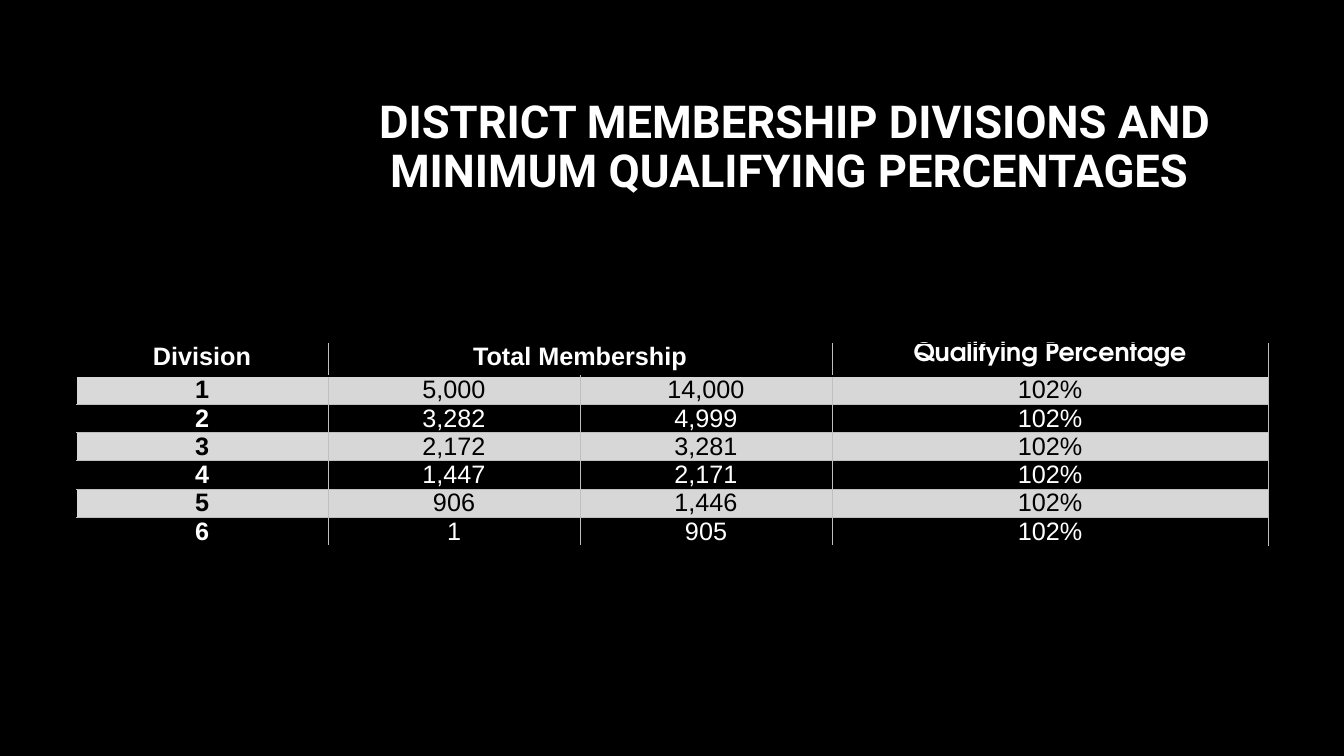
from lxml import etree
from pptx import Presentation
from pptx.dml.color import RGBColor
from pptx.enum.text import MSO_ANCHOR, MSO_AUTO_SIZE, PP_ALIGN
from pptx.oxml.ns import qn
from pptx.util import Pt

PX = 914400 / 100.8
COLORS = {
    "black": "000000",
    "white": "FFFFFF",
    "band": "D7D7D7",
    "division_band": "D9D9D9",
    "grid": "BFBFBF",
}


def px(length):
    return round(length * PX)


def add_border(cell, side, color, points):
    line = etree.SubElement(cell._tc.get_or_add_tcPr(), qn(f"a:ln{side}"), w=str(Pt(points)))
    fill = etree.SubElement(line, qn("a:solidFill"))
    etree.SubElement(fill, qn("a:srgbClr"), val=COLORS[color])


# Slide
prs = Presentation()
prs.slide_width, prs.slide_height = px(1344), px(756)
slide = prs.slides.add_slide(prs.slide_layouts[5])
slide.background.fill.solid()
slide.background.fill.fore_color.rgb = RGBColor.from_string(COLORS["black"])

# Title
title = slide.shapes.title
title.left, title.top, title.width, title.height = px(320), px(85), px(950), px(142)
frame = title.text_frame
frame.text = "DISTRICT MEMBERSHIP DIVISIONS AND MINIMUM QUALIFYING PERCENTAGES "
frame.word_wrap = True
frame.auto_size = MSO_AUTO_SIZE.NONE
frame.vertical_anchor = MSO_ANCHOR.MIDDLE
frame.margin_top, frame.margin_bottom = 0, px(16)
heading = frame.paragraphs[0]
heading.alignment = PP_ALIGN.CENTER
heading.line_spacing = 0.9
heading.font.name = "Roboto"
heading.font.size = Pt(32.4)
heading.font.bold = True
heading.font.color.rgb = RGBColor.from_string(COLORS["white"])

# Membership table
headers = ["Division", "Total Membership", "", "Qualifying Percentage"]
membership_ranges = [
    ("5,000", "14,000"),
    ("3,282", "4,999"),
    ("2,172", "3,281"),
    ("1,447", "2,171"),
    ("906", "1,446"),
    ("1", "905"),
]
rows = [headers] + [
    [str(division), low, high, "102%"]
    for division, (low, high) in enumerate(membership_ranges, 1)
]
column_widths = [252, 252, 252, 436]
header_height, row_height = 33, 28
last_row = len(rows) - 1

divisions = slide.shapes.add_table(
    len(rows), len(headers), px(76), px(343),
    px(sum(column_widths)), px(header_height + row_height * last_row),
).table
divisions.first_row = divisions.horz_banding = False
for column, width in zip(divisions.columns, column_widths):
    column.width = px(width)
for r, row in enumerate(divisions.rows):
    row.height = px(row_height if r else header_height)
divisions.cell(0, 1).merge(divisions.cell(0, 2))

for r, values in enumerate(rows):
    banded = r % 2 == 1
    for c, value in enumerate(values):
        cell = divisions.cell(r, c)

        # Borders: dark outer edges and header rule, grey grid inside
        thin, grid, header_rule = ("black", 0.38), ("grid", 0.6), ("black", 1.65)
        add_border(cell, "L", *(grid if c else thin))
        add_border(cell, "R", *grid)
        add_border(cell, "T", *(thin if r == 0 else header_rule if r == 1 else grid))
        add_border(cell, "B", *(header_rule if r == 0 else thin if r == last_row else grid))

        # Fill
        band = "band" if c else "division_band"
        cell.fill.solid()
        cell.fill.fore_color.rgb = RGBColor.from_string(COLORS[band if banded else "black"])

        # Text
        cell.margin_left = cell.margin_right = px(5)
        cell.margin_top = cell.margin_bottom = 0
        if cell.is_spanned:
            continue
        cell.text_frame.text = value
        paragraph = cell.text_frame.paragraphs[0]
        paragraph.alignment = PP_ALIGN.CENTER
        font = paragraph.runs[0].font
        font.name = "TeX Gyre Adventor" if (r, c) == (0, 3) else "Arial"
        font.size = Pt(18)
        font.bold = r == 0 or c == 0
        font.color.rgb = RGBColor.from_string(COLORS["black" if banded else "white"])

prs.save("out.pptx")
